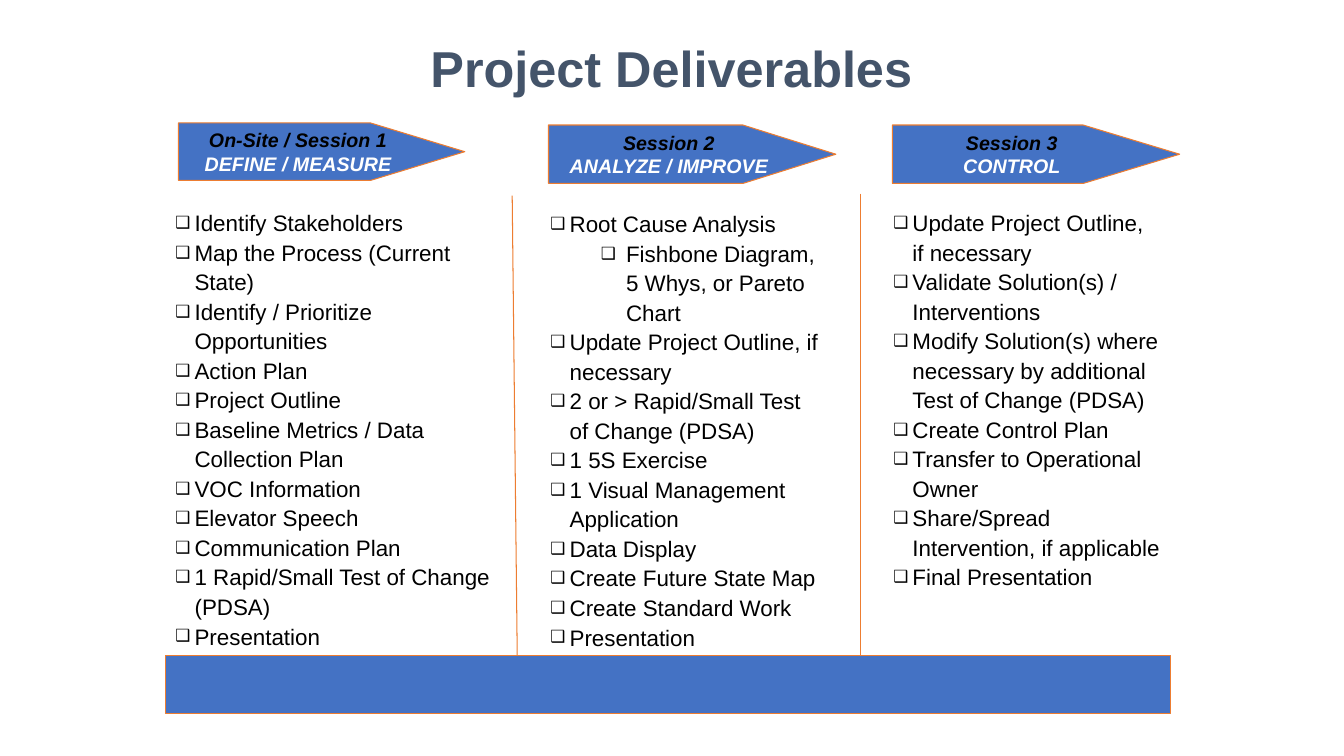
from lxml.etree import SubElement
from pptx import Presentation
from pptx.dml.color import RGBColor
from pptx.enum.shapes import MSO_CONNECTOR, MSO_SHAPE
from pptx.enum.text import MSO_ANCHOR, MSO_AUTO_SIZE, PP_ALIGN
from pptx.oxml.ns import qn
from pptx.util import Inches, Pt

BLUE, ORANGE, SLATE = "4472C4", "ED7D31", "44546A"
BLACK, WHITE = "000000", "FFFFFF"


def paint(color, value):
    color.rgb = RGBColor.from_string(value)


def write(para, text, size, color, bold=False, italic=False):
    run = para.add_run()
    run.text = text
    font = run.font
    font.name, font.size = "Arial", Pt(size)
    font.bold, font.italic = bold, italic
    paint(font.color, color)


# Each phase: arrow box and point, arrow labels, list box, items with level
phases = [
    ((1.77, 1.22, 2.84, 0.57), 1.64, "On-Site / Session 1", "DEFINE / MEASURE",
     (1.64, 2, 3.32, 4.54),
     [("Identify Stakeholders", 0),
      ("Map the Process (Current State)", 0),
      ("Identify / Prioritize Opportunities", 0),
      ("Action Plan", 0),
      ("Project Outline", 0),
      ("Baseline Metrics / Data Collection Plan", 0),
      ("VOC Information", 0),
      ("Elevator Speech", 0),
      ("Communication Plan", 0),
      ("1 Rapid/Small Test of Change (PDSA)", 0),
      ("Presentation", 0)]),
    ((5.44, 1.24, 2.85, 0.58), 1.59, "Session 2", "ANALYZE / IMPROVE",
     (5.36, 2.01, 2.93, 4.52),
     [("Root Cause Analysis", 0),
      ("Fishbone Diagram, 5 Whys, or Pareto Chart", 1),
      ("Update Project Outline, if necessary", 0),
      ("2 or > Rapid/Small Test of Change (PDSA)", 0),
      ("1 5S Exercise", 0),
      ("1 Visual Management Application", 0),
      ("Data Display", 0),
      ("Create Future State Map", 0),
      ("Create Standard Work", 0),
      ("Presentation", 0)]),
    ((8.85, 1.24, 2.85, 0.58), 1.65, "Session 3", "CONTROL",
     (8.76, 2, 2.85, 4.25),
     [("Update Project Outline, if necessary", 0),
      ("Validate Solution(s) / Interventions", 0),
      ("Modify Solution(s) where necessary by additional "
       "Test of Change (PDSA)", 0),
      ("Create Control Plan", 0),
      ("Transfer to Operational Owner", 0),
      ("Share/Spread Intervention, if applicable", 0),
      ("Final Presentation", 0)]),
]
# Left margin and hanging indent by level
indents = [(0.19, -0.19), (0.75, -0.25)]

deck = Presentation()
deck.slide_width, deck.slide_height = Inches(13.33), Inches(7.5)
slide = deck.slides.add_slide(deck.slide_layouts.get_by_name("Comparison"))
shapes = slide.shapes

# Title
title = shapes.title
title.left, title.top = Inches(2.08), Inches(0.29)
title.width, title.height = Inches(9.16), Inches(0.69)
frame = title.text_frame
frame.margin_left = frame.margin_right = 0
frame.margin_top = frame.margin_bottom = 0
frame.vertical_anchor = MSO_ANCHOR.BOTTOM
frame.auto_size = MSO_AUTO_SIZE.NONE
head = frame.paragraphs[0]
head.alignment, head.line_spacing = PP_ALIGN.CENTER, 0.9
write(head, "Project Deliverables", 36, SLATE, bold=True)

# Three lists use the body placeholders, the fourth goes
bodies = [p for p in slide.placeholders if p != title][:4]
spare = bodies.pop().element
spare.getparent().remove(spare)

for body, (place, point, name, stage, area, items) in zip(bodies, phases):
    # Phase arrow
    arrow = shapes.add_shape(MSO_SHAPE.PENTAGON, *map(Inches, place))
    arrow.adjustments[0] = point
    arrow.shadow.inherit = False
    arrow.fill.solid()
    paint(arrow.fill.fore_color, BLUE)
    paint(arrow.line.color, ORANGE)
    arrow.line.width = Pt(0.75)
    frame = arrow.text_frame
    frame.vertical_anchor = MSO_ANCHOR.MIDDLE
    labels = [frame.paragraphs[0], frame.add_paragraph()]
    for para, text, color in zip(labels, (name, stage), (BLACK, WHITE)):
        para.alignment = PP_ALIGN.CENTER
        write(para, text, 14, color, bold=True, italic=True)

    # Checklist
    body.left, body.top, body.width, body.height = map(Inches, area)
    frame = body.text_frame
    frame.vertical_anchor = MSO_ANCHOR.TOP
    frame.auto_size = MSO_AUTO_SIZE.NONE
    for i, (text, level) in enumerate(items):
        para = frame.add_paragraph() if i else frame.paragraphs[0]
        para.level, para.line_spacing = level, 1.1
        para.alignment = PP_ALIGN.LEFT
        para.space_before = para.space_after = Pt(0)
        props = para._p.get_or_add_pPr()
        for key, inch in zip(("marL", "indent"), indents[level]):
            props.set(key, str(Inches(inch)))
        SubElement(props, qn("a:buSzPct"), val="75000")
        SubElement(props, qn("a:buFont"), typeface="Arial")
        SubElement(props, qn("a:buChar"), char="❑")
        write(para, text, 16, BLACK)

# Column dividers
for ends in ((5.08, 1.94, 5.13, 6.5), (8.53, 1.92, 8.53, 6.5)):
    rule = shapes.add_connector(MSO_CONNECTOR.STRAIGHT, *map(Inches, ends))
    paint(rule.line.color, ORANGE)
    rule.line.width = Pt(0.75)
    SubElement(rule.element.spPr, qn("a:effectLst"))

# Bottom bar
bar = shapes.add_shape(MSO_SHAPE.RECTANGLE, Inches(1.64), Inches(6.5),
                       Inches(9.97), Inches(0.58))
bar.shadow.inherit = False
bar.fill.solid()
paint(bar.fill.fore_color, BLUE)
paint(bar.line.color, ORANGE)
bar.line.width = Pt(0.75)

deck.save("out.pptx")
